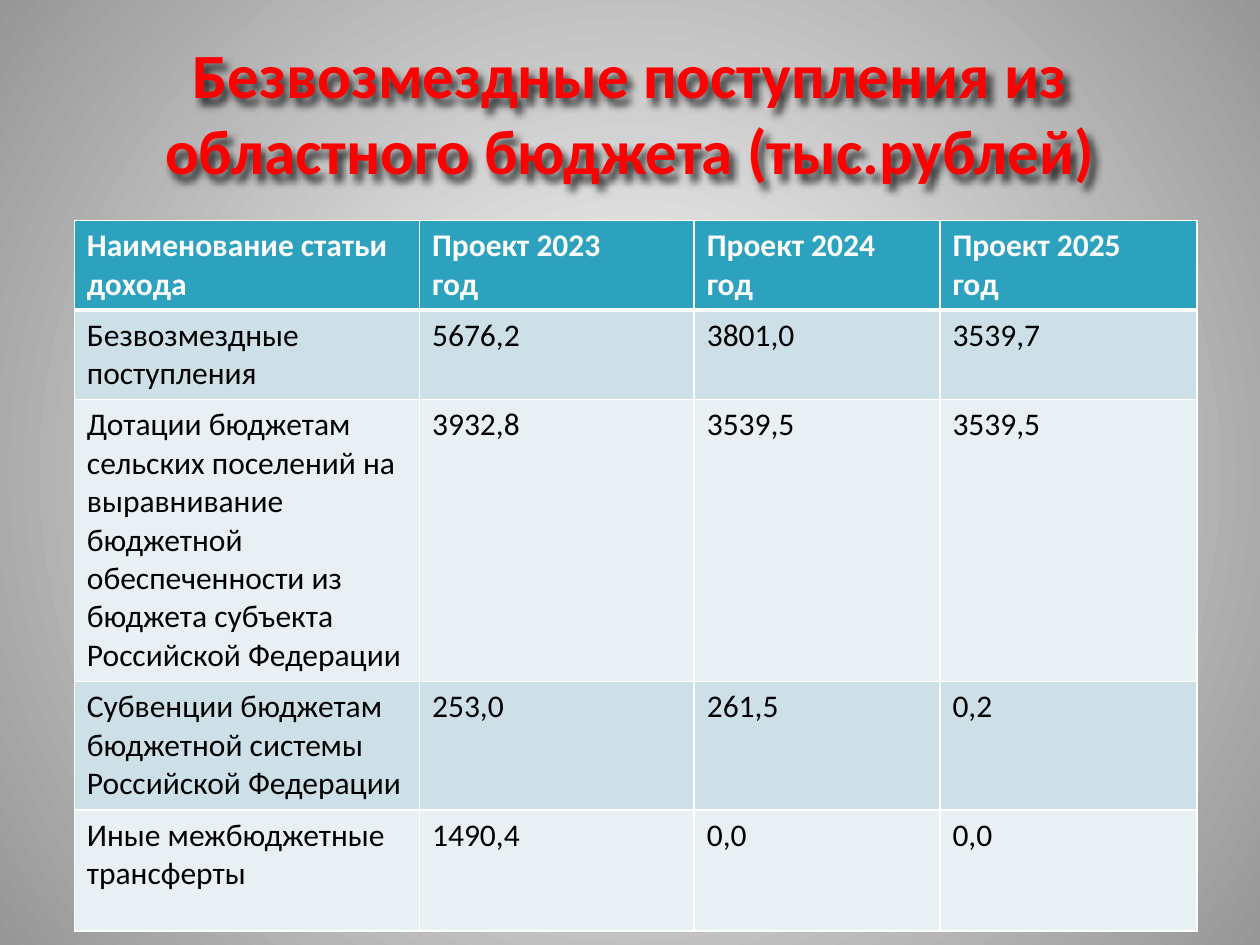
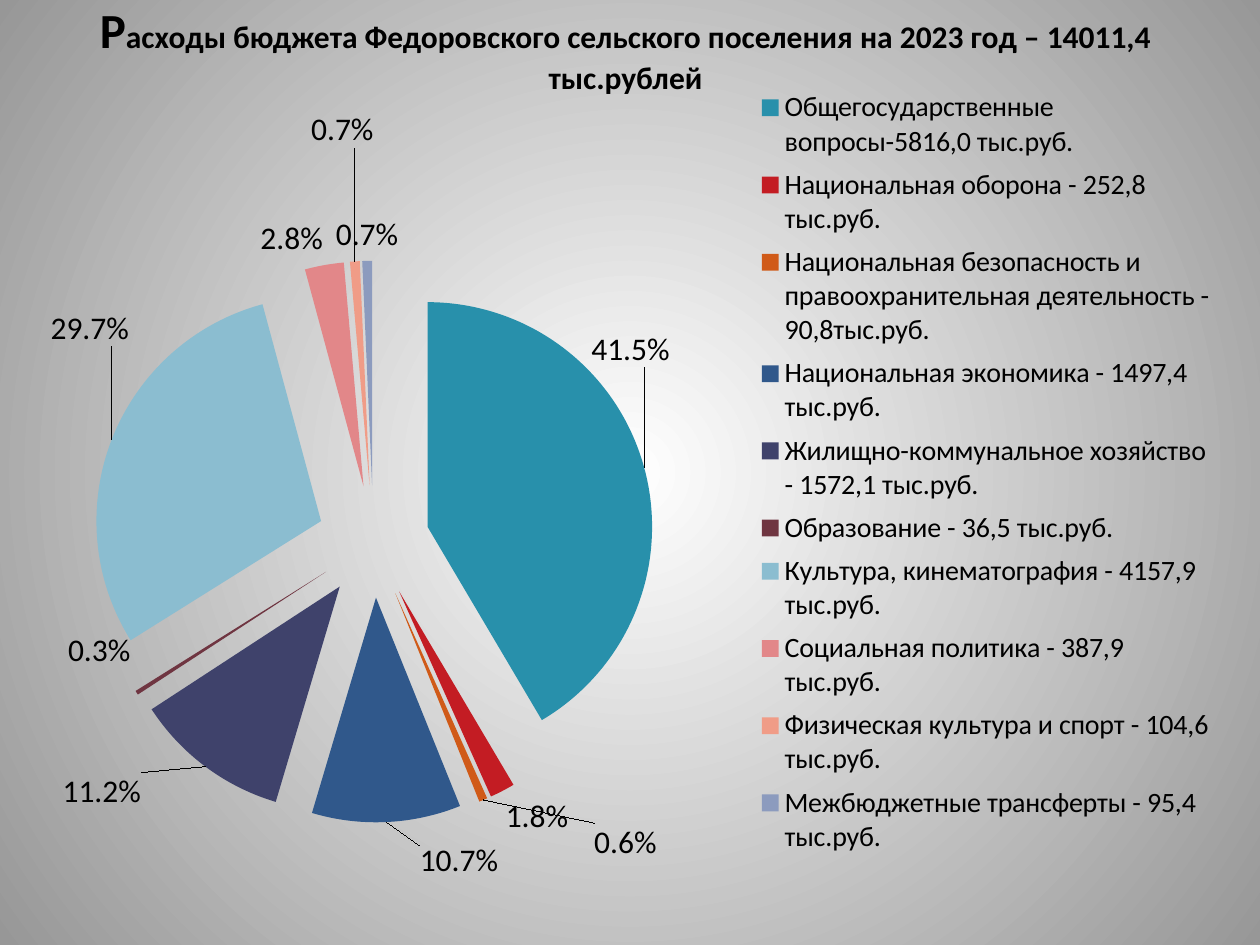
from pptx import Presentation
from pptx.chart.data import CategoryChartData as ChartData
from pptx.dml.color import RGBColor as RGB
from pptx.enum.chart import XL_CHART_TYPE as Kind, XL_LABEL_POSITION as Spot
from pptx.enum.chart import XL_LEGEND_POSITION as Side
from pptx.enum.text import MSO_ANCHOR as Anchor, PP_ALIGN as Align
from pptx.oxml import parse_xml as parse
from pptx.oxml.ns import nsdecls, qn
from pptx.util import Inches, Pt

FONT = "Calibri"
RED = RGB(0xFF, 0x00, 0x00)
BLACK = RGB(0x00, 0x00, 0x00)
WHITE = RGB(0xFF, 0xFF, 0xFF)
TEAL = RGB(0x2D, 0xA2, 0xBF)
BANDS = [RGB(0xCD, 0xE0, 0xE8), RGB(0xE8, 0xF0, 0xF4)]
SLICES = [RGB.from_string(code) for code in (
    "2890AB", "C31C23", "D05A18", "30588B", "3F426B",
    "6F3541", "8BBDD0", "E28789", "F09C87", "8C9BBE")]

COLS = [2.74, 2.18, 1.95, 2.04]
ROWS = [0.71, 0.71, 2.24, 1.02, 0.96]
INCOME = [
    ("Наименование статьи дохода", "Проект 2023\vгод", "Проект 2024 год",
     "Проект 2025\vгод"),
    ("Безвозмездные поступления", "5676,2", "3801,0", "3539,7"),
    ("Дотации бюджетам сельских поселений на выравнивание бюджетной "
     "обеспеченности из бюджета субъекта Российской Федерации",
     "3932,8", "3539,5", "3539,5"),
    ("Субвенции бюджетам бюджетной системы Российской Федерации",
     "253,0", "261,5", "0,2"),
    ("Иные межбюджетные трансферты", "1490,4", "0,0", "0,0"),
]
COSTS = {
    "Общегосударственные вопросы-5816,0 тыс.руб.": 0.415,
    "Национальная оборона - 252,8 тыс.руб.": 0.018,
    "Национальная безопасность и правоохранительная деятельность - "
    "90,8тыс.руб.": 0.006,
    "Национальная экономика - 1497,4 тыс.руб.": 0.107,
    "Жилищно-коммунальное хозяйство - 1572,1 тыс.руб.": 0.112,
    "Образование - 36,5 тыс.руб.": 0.003,
    "Культура, кинематография - 4157,9 тыс.руб.": 0.297,
    "Социальная политика - 387,9 тыс.руб.": 0.028,
    "Физическая культура и спорт - 104,6 тыс.руб.": 0.007,
    "Межбюджетные трансферты - 95,4 тыс.руб.": 0.007,
}
SHIFTS = {0: (-0.05, -0.12), 2: (0.09, 0.02), 3: (0.06, 0.02),
          4: (-0.05, 0), 5: (0, -0.08), 6: (0.02, -0.11),
          8: (-0.01, -0.13)}
WIDE = 6


def style(font, size, color, bold=False):
    """Set the look of a font."""
    font.name, font.size, font.bold = FONT, Pt(size), bold
    font.color.rgb = color


def add_slide(deck):
    """Add a blank slide with the round grey gradient."""
    slide = deck.slides.add_slide(deck.slide_layouts[6])
    slide._element.cSld.insert(0, parse(
        f'<p:bg {nsdecls("p", "a")}><p:bgPr><a:gradFill rotWithShape="1">'
        '<a:gsLst><a:gs pos="0"><a:srgbClr val="FFFFFF"/></a:gs>'
        '<a:gs pos="100000"><a:srgbClr val="979797"/></a:gs></a:gsLst>'
        '<a:path path="circle"><a:fillToRect l="50000" t="50000" '
        'r="50000" b="50000"/></a:path></a:gradFill><a:effectLst/>'
        '</p:bgPr></p:bg>'))
    return slide


def add_title(slide, box, parts, color):
    """Add a bold centred title made of (text, size) parts."""
    shape = slide.shapes.add_textbox(*map(Inches, box))
    frame = shape.text_frame
    frame.word_wrap, frame.vertical_anchor = True, Anchor.MIDDLE
    par = frame.paragraphs[0]
    par.alignment = Align.CENTER
    for text, size in parts:
        run = par.add_run()
        run.text = text
        style(run.font, size, color, True)
    return shape


def add_shade(shape):
    """Give an unfilled text shape a soft shadow."""
    shape._element.spPr.append(parse(
        f'<a:effectLst {nsdecls("a")}><a:outerShdw blurRad="50800" '
        'dist="50800" dir="3600000" algn="tl" rotWithShape="0">'
        '<a:srgbClr val="000000"><a:alpha val="75000"/></a:srgbClr>'
        '</a:outerShdw></a:effectLst>'))


def set_edges(cell, base):
    """Draw white cell borders with the given bottom width."""
    props = cell._tc.get_or_add_tcPr()
    for at, (side, width) in enumerate(zip("LRTB", (1, 1, 1, base))):
        props.insert(at, parse(
            f'<a:ln{side} {nsdecls("a")} w="{Pt(width)}"><a:solidFill>'
            f'<a:srgbClr val="{WHITE}"/></a:solidFill></a:ln{side}>'))


def add_grid(slide, box, rows):
    """Add the banded table with a header row."""
    table = slide.shapes.add_table(
        len(rows), len(COLS), *map(Inches, box)).table
    for col, width in zip(table.columns, COLS):
        col.width = Inches(width)
    for at, (row, height) in enumerate(zip(table.rows, ROWS)):
        row.height = Inches(height)
        head = at == 0
        for cell, text in zip(row.cells, rows[at]):
            cell.text = text
            cell.fill.solid()
            cell.fill.fore_color.rgb = TEAL if head else BANDS[(at - 1) % 2]
            set_edges(cell, 3 if head else 1)
            for run in cell.text_frame.paragraphs[0].runs:
                style(run.font, 18, WHITE if head else BLACK, head)


def layout(x, y, size=None, inner=False):
    """Make a manual chart layout, or an offset when no size is given."""
    tags = [("layoutTarget", "inner")] if inner else []
    if size:
        tags += [("xMode", "edge"), ("yMode", "edge")]
    tags += [("x", x), ("y", y)]
    if size:
        tags += zip("wh", size)
    body = "".join(f'<c:{tag} val="{val}"/>' for tag, val in tags)
    return parse(f'<c:layout {nsdecls("c")}><c:manualLayout>{body}'
                 '</c:manualLayout></c:layout>')


def set_labels(series):
    """Show shares outside the slices and move the crowded ones."""
    labels = series.data_labels
    labels.show_value, labels.position = True, Spot.OUTSIDE_END
    labels.number_format = "0.0%"
    labels.number_format_is_linked = False
    style(labels.font, 18, BLACK)
    for at in SHIFTS:
        label = series.points[at].data_label
        style(label.font, 18, BLACK)
        label.position = Spot.BEST_FIT if at == WIDE else Spot.OUTSIDE_END
    root = labels._element
    for node in root.findall(qn("c:dLbl")):
        at = int(node.find(qn("c:idx")).get("val"))
        node.insert(1, layout(*SHIFTS[at]))
        node.insert(2, parse(f'<c:numFmt {nsdecls("c")} formatCode="0.0%" '
                             'sourceLinked="0"/>'))
    for old in root.findall(qn("c:showLeaderLines")):
        root.remove(old)
    root.append(parse(f'<c:showLeaderLines {nsdecls("c")} val="1"/>'))


def add_pie(slide, box, shares):
    """Add the exploded pie with its legend."""
    data = ChartData(number_format="0.0%")
    data.categories = list(shares)
    data.add_series("Series 1", list(shares.values()))
    chart = slide.shapes.add_chart(Kind.PIE, *map(Inches, box), data).chart
    chart.has_title = False
    style(chart.font, 18, BLACK)
    chart.has_legend = True
    legend = chart.legend
    legend.position, legend.include_in_layout = Side.RIGHT, False
    style(legend.font, 16, BLACK)
    plot = chart.plots[0]
    plot.vary_by_categories = True
    series = plot.series[0]
    for at, color in enumerate(SLICES):
        fill = series.points[at].format.fill
        fill.solid()
        fill.fore_color.rgb = color
    series._element.find(qn("c:dPt")).addprevious(
        parse(f'<c:explosion {nsdecls("c")} val="25"/>'))
    set_labels(series)
    area = chart._chartSpace.chart.plotArea
    for root, at, new in (
            (area, 0, layout(0.05, 0.24, (0.48, 0.69), True)),
            (legend._element, 1, layout(0.61, 0.02, (0.38, 0.96)))):
        for old in root.findall(qn("c:layout")):
            root.remove(old)
        root.insert(at, new)


def main():
    """Build both budget slides."""
    deck = Presentation()
    deck.slide_width, deck.slide_height = Inches(10), Inches(7.5)

    slide = add_slide(deck)
    add_shade(add_title(slide, (0.5, 0.3, 9, 1.17), [
        ("Безвозмездные поступления из областного бюджета (тыс.рублей)", 36),
    ], RED))
    add_grid(slide, (0.59, 1.75, sum(COLS), sum(ROWS)), INCOME)

    slide = add_slide(deck)
    add_title(slide, (0.43, 0, 9.07, 0.76), [
        ("Р", 28),
        ("асходы бюджета Федоровского сельского поселения на 2023 год – "
         "14011,4 тыс.рублей", 18),
    ], BLACK)
    add_pie(slide, (0.2, 0.52, 9.53, 6.46), COSTS)
    deck.save("out.pptx")


if __name__ == "__main__":
    main()
